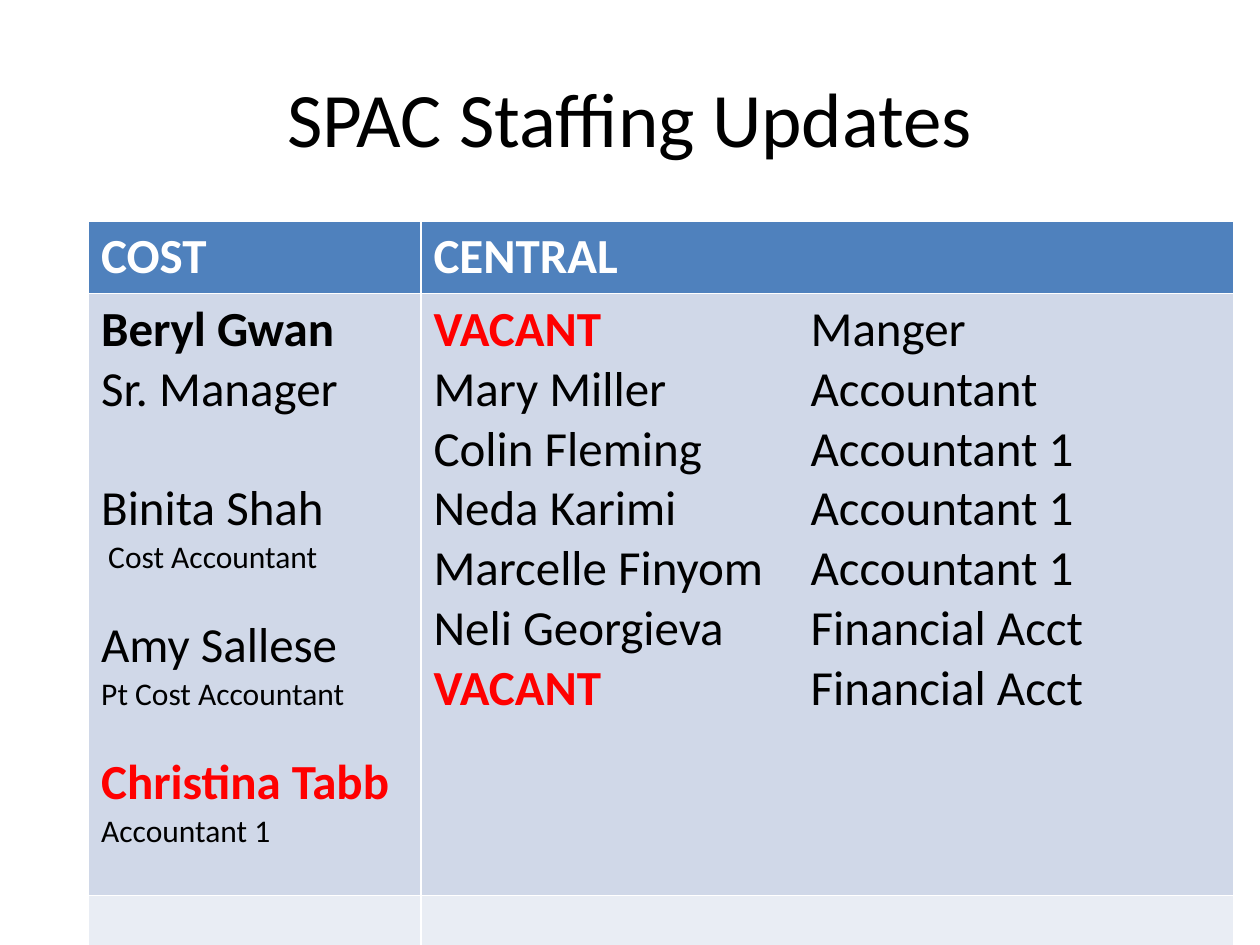
"""Build the SPAC staffing slide with its table of cost and central staff."""
from lxml import etree
from pptx import Presentation
from pptx import util as u
from pptx.dml.color import RGBColor
from pptx.enum import text
from pptx.oxml.ns import qn

TITLE = "SPAC Staffing Updates"
HEADS = ["COST", "CENTRAL"]
COST = [
    ("Beryl Gwan", "lead", 0),
    ("Sr. Manager", "body", 0),
    ("Binita Shah", "body", 34),
    (" Cost Accountant", "role", 0),
    ("Amy Sallese", "body", 22),
    ("Pt Cost Accountant", "role", 0),
    ("Christina Tabb", "alert", 22),
    ("Accountant 1", "role", 0),
]
CENTRAL = [
    ("VACANT", "alert", "Manger"),
    ("Mary Miller", "body", "Accountant"),
    ("Colin Fleming", "body", "Accountant 1"),
    ("Neda Karimi", "body", "Accountant 1"),
    ("Marcelle Finyom", "body", "Accountant 1"),
    ("Neli Georgieva", "body", "Financial Acct"),
    ("VACANT", "alert", "Financial Acct"),
]

THEME = {
    "font": "Calibri",
    "fills": ["4F81BD", "D0D8E8", "E9EDF4"],
    "title": {"size": 44, "bold": False, "color": "000000"},
    "head": {"size": 28, "bold": True, "color": "FFFFFF"},
    "lead": {"size": 28, "bold": True, "color": "000000"},
    "body": {"size": 28, "bold": False, "color": "000000"},
    "role": {"size": 18, "bold": False, "color": "000000"},
    "alert": {"size": 28, "bold": True, "color": "FF0000"},
}
COLS = [190, 464.4]
ROWS = [41.4, 344, 29]
LEFT, TOP, TAB = 50.6, 126.2, 215.5


def add_run(para, words, style):
    look = THEME[style]
    run = para.add_run()
    run.text = words
    form = {"name": THEME["font"], "size": u.Pt(look["size"]), "bold": look["bold"]}
    for key, val in form.items():
        setattr(run.font, key, val)
    run.font.color.rgb = RGBColor.from_string(look["color"])


def add_tab(para, pos):
    tabs = etree.SubElement(para._p.get_or_add_pPr(), qn("a:tabLst"))
    etree.SubElement(tabs, qn("a:tab"), pos=str(u.Pt(pos)), algn="l")


def add_lines(cell, count):
    frame = cell.text_frame
    return [frame.paragraphs[0]] + [frame.add_paragraph() for _ in range(count - 1)]


def add_title(slide):
    title = slide.shapes.title
    place = {"left": 36, "top": 21.6, "width": 648, "height": 90}
    for key, val in place.items():
        setattr(title, key, u.Pt(val))
    frame = title.text_frame
    frame.vertical_anchor = text.MSO_ANCHOR.MIDDLE
    para = frame.paragraphs[0]
    para.alignment = text.PP_ALIGN.CENTER
    add_run(para, TITLE, "title")


def add_staff(slide):
    box = [u.Pt(n) for n in (LEFT, TOP, sum(COLS), sum(ROWS))]
    table = slide.shapes.add_table(len(ROWS), len(COLS), *box).table
    for col, wide in zip(table.columns, COLS):
        col.width = u.Pt(wide)
    for row, high, fill in zip(table.rows, ROWS, THEME["fills"]):
        row.height = u.Pt(high)
        for cell in row.cells:
            cell.fill.solid()
            cell.fill.fore_color.rgb = RGBColor.from_string(fill)
    for cell, head in zip(table.rows[0].cells, HEADS):
        add_run(cell.text_frame.paragraphs[0], head, "head")
    cost, central = table.rows[1].cells
    for para, (words, style, gap) in zip(add_lines(cost, len(COST)), COST):
        if gap:
            para.space_before = u.Pt(gap)
        add_run(para, words, style)
    for para, (name, style, role) in zip(add_lines(central, len(CENTRAL)), CENTRAL):
        add_tab(para, TAB)
        add_run(para, name, style)
        add_run(para, "\t" + role, "body")


def main():
    deck = Presentation()
    deck.slide_width, deck.slide_height = u.Pt(720), u.Pt(540)
    slide = deck.slides.add_slide(deck.slide_layouts[5])
    add_title(slide)
    add_staff(slide)
    deck.save("out.pptx")


if __name__ == "__main__":
    main()
